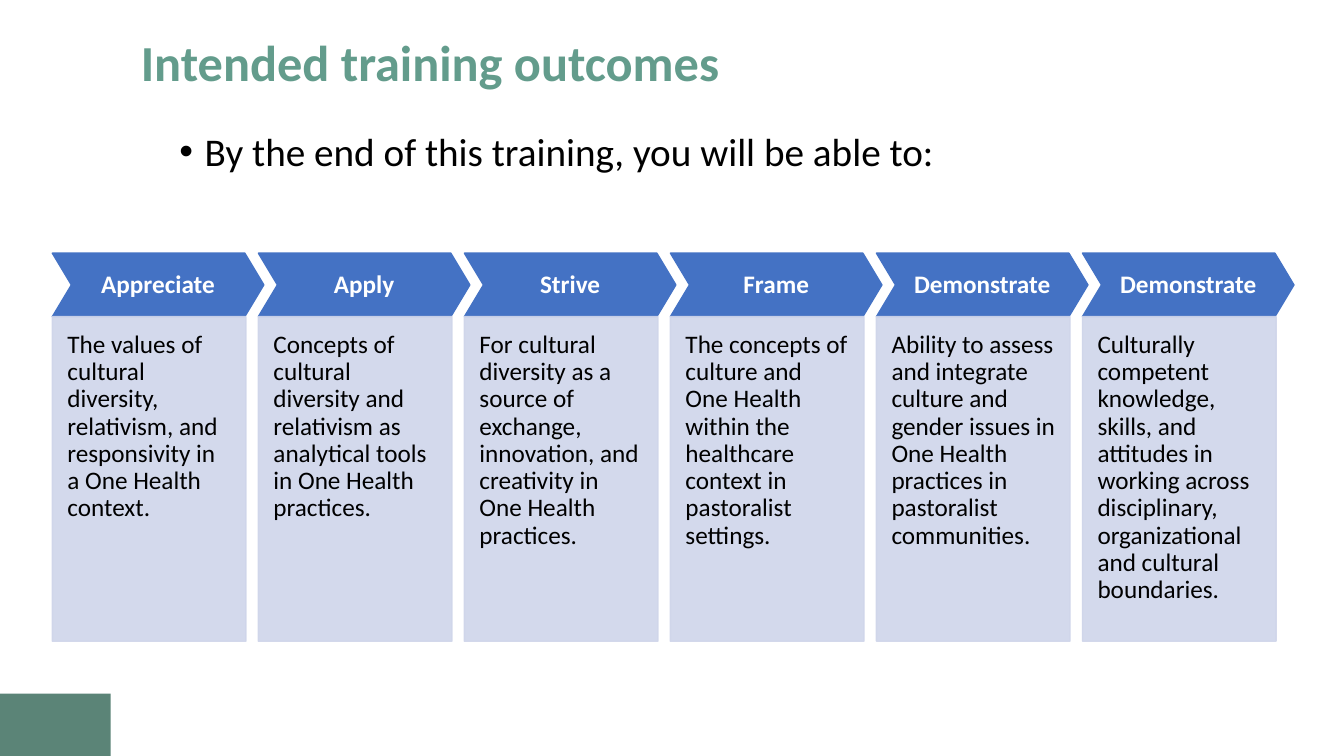
from pptx import Presentation
from pptx.dml.color import RGBColor
from pptx.enum.shapes import MSO_SHAPE as Shape
from pptx.enum.text import MSO_ANCHOR as Anchor, PP_ALIGN as Align
from pptx.oxml.ns import qn
from pptx.util import Cm, Pt
from lxml.etree import SubElement as Sub

HUES = {
    "title": "639C8C", "corner": "5B8477", "arrow": "4472C4",
    "panel": "CFD5EA", "dark": "000000", "light": "FFFFFF",
}

STEPS = [
    ("Appreciate", "The values of cultural diversity, relativism, and responsivity in a One Health context."),
    ("Apply", "Concepts of cultural diversity and relativism as analytical tools in One Health practices."),
    ("Strive", "For cultural diversity as a source of exchange, innovation, and creativity in One Health practices."),
    ("Frame", "The concepts of culture and One Health within the healthcare context in pastoralist settings."),
    ("Demonstrate", "Ability to assess and integrate culture and gender issues in One Health practices in pastoralist communities."),
    ("Demonstrate", "Culturally competent knowledge, skills, and attitudes in working across disciplinary, organizational and cultural boundaries."),
]


def hue(name):
    return RGBColor.from_string(HUES[name])


def write(shape, text, size, color, bold=False, align=Align.LEFT,
          anchor=Anchor.TOP, pads=(0.25, 0.13, 0.25, 0.13), bullet=False):
    frame = shape.text_frame
    frame.word_wrap = True
    frame.vertical_anchor = anchor
    frame.margin_left, frame.margin_top, frame.margin_right, frame.margin_bottom = map(Cm, pads)
    frame.text = text
    para = frame.paragraphs[0]
    para.alignment = align
    para.line_spacing = 0.9
    if bullet:
        props = para._p.get_or_add_pPr()
        props.set("marL", str(Cm(0.64)))
        props.set("indent", str(Cm(-0.64)))
        Sub(props, qn("a:buFont")).set("typeface", "Arial")
        Sub(props, qn("a:buChar")).set("char", "•")
    font = para.runs[0].font
    font.name, font.size, font.bold = "Calibri", Pt(size), bold
    font.color.rgb = hue(color)


def block(slide, kind, box, color):
    shape = slide.shapes.add_shape(kind, *map(Cm, box))
    shape.shadow.inherit = False
    shape.fill.solid()
    shape.fill.fore_color.rgb = hue(color)
    shape.line.color.rgb = hue(color)
    shape.line.width = Pt(1)
    return shape


def corner(slide, box):
    block(slide, Shape.RECTANGLE, box, "corner").line.fill.background()


def title(slide, box):
    area = slide.shapes.add_textbox(*map(Cm, box))
    write(area, "Intended training outcomes", 36, "title", bold=True, anchor=Anchor.MIDDLE)


def intro(slide, box):
    area = slide.shapes.add_textbox(*map(Cm, box))
    write(area, "By the end of this training, you will be able to:", 28, "dark", bullet=True)


def step(slide, box, head, body):
    left, top, wide, high = box
    band, tip = 1.6, 0.45
    arrow = block(slide, Shape.CHEVRON, (left, top, wide, band), "arrow")
    arrow.adjustments[0] = 0.3
    write(arrow, head, 18, "light", bold=True, align=Align.CENTER,
          anchor=Anchor.MIDDLE, pads=(0.2,) * 4)
    panel = block(slide, Shape.RECTANGLE, (left, top + band, wide - tip, high - band), "panel")
    for tint in panel._element.spPr.iter(qn("a:srgbClr")):
        Sub(tint, qn("a:alpha")).set("val", "90000")
    write(panel, body, 18, "dark", pads=(0.38, 0.38, 0.38, 0.76))


def flow(slide, box):
    left, top, wide, high = box
    span = 5.33
    pitch = (wide - span) / (len(STEPS) - 1)
    for num, (head, body) in enumerate(STEPS):
        step(slide, (left + num * pitch, top, span, high), head, body)


def main():
    deck = Presentation()
    deck.slide_width, deck.slide_height = Cm(33.87), Cm(19.05)
    slide = deck.slides.add_slide(deck.slide_layouts[6])
    corner(slide, (0, 17.48, 2.79, 1.57))
    title(slide, (3.3, 0.74, 28.22, 1.8))
    intro(slide, (4.27, 3.2, 27.25, 13.97))
    flow(slide, (1.32, 6.38, 31.29, 9.78))
    deck.save("out.pptx")


if __name__ == "__main__":
    main()
